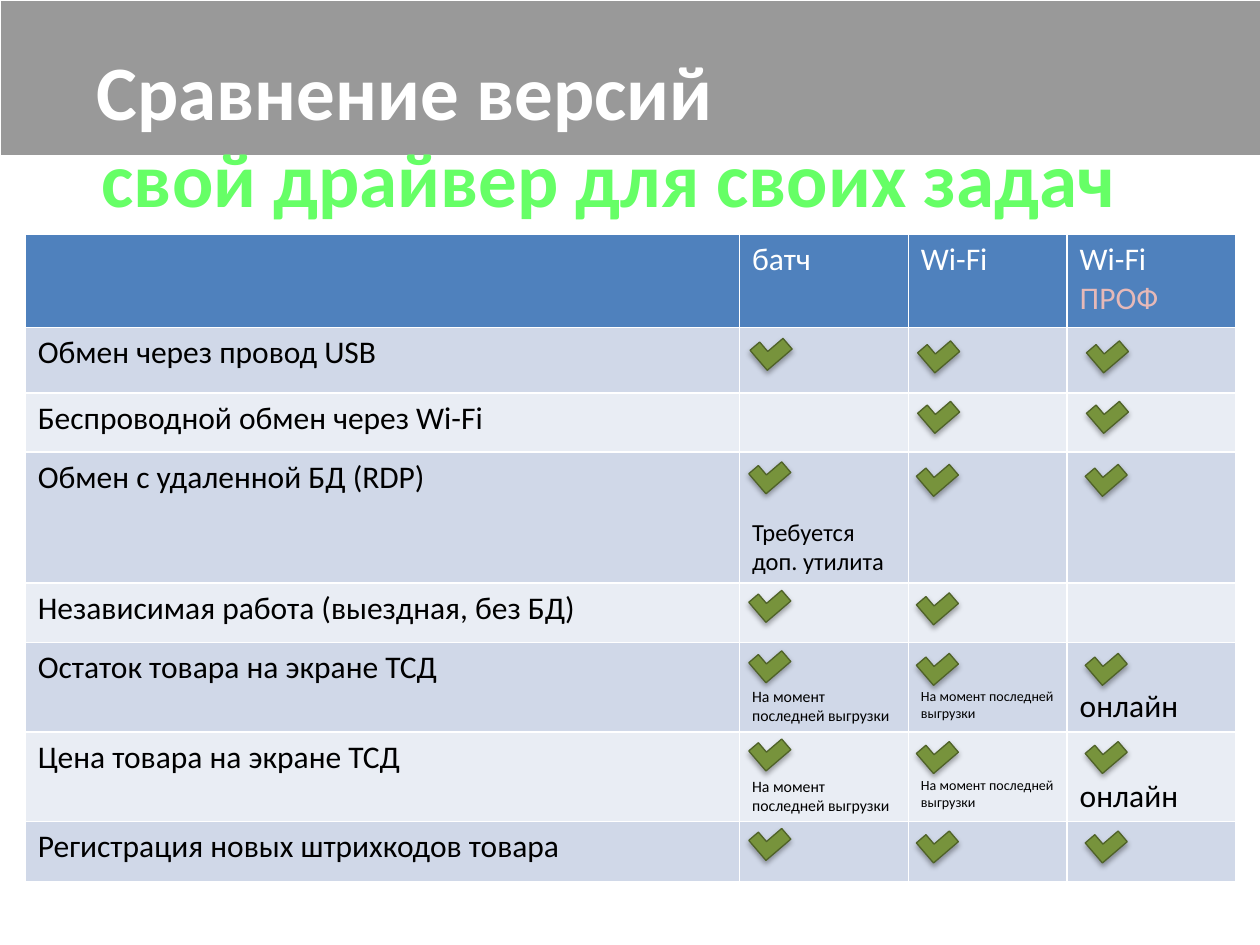
from lxml.etree import SubElement
from pptx import Presentation
from pptx.dml.color import RGBColor
from pptx.enum.shapes import MSO_SHAPE as Shape
from pptx.enum.text import MSO_AUTO_SIZE as AutoSize
from pptx.oxml.ns import qn
from pptx.util import Inches, Pt

FONT = "Calibri"
TITLES = [
    ("Сравнение версий", "FFFFFF", (0.67, 0.3, 5.14, 0.84)),
    ("свой драйвер для своих задач", "66FF66", (0.71, 0.99, 8.33, 0.84)),
]
HEADER_HEIGHT = 0.74
HEADERS = [
    [],
    [("батч", "FFFFFF")],
    [("Wi-Fi", "FFFFFF")],
    [("Wi-Fi ", "FFFFFF"), ("ПРОФ", "E6B9B8")],
]
COLUMN_WIDTHS = [5.67, 1.34, 1.26, 1.34]
TABLE_LEFT, TABLE_TOP = 0.2, 1.86
BANDS = ["D0D8E8", "E9EDF4"]

# A note is its text, its size and its distance from the top of the cell
UTILITY_NOTE = ("Требуется доп. утилита", 14, 0.52)
STOCK_NOTES = [
    ("На момент последней выгрузки", 9, 0.36),
    ("На момент последней выгрузки", 8, 0.36),
    ("онлайн", 18, 0.36),
]
# Feature, row height, top of its ticks, ticked versions, notes by version
FEATURES = [
    ("Обмен через провод USB", 0.52, 2.69, (0, 1, 2), []),
    ("Беспроводной обмен через Wi-Fi", 0.47, 3.17, (1, 2), []),
    ("Обмен с удаленной БД (RDP)", 1.04, 3.67, (0, 1, 2), [UTILITY_NOTE]),
    ("Независимая работа (выездная, без БД)", 0.47, 4.69, (0, 1), []),
    ("Остаток товара на экране ТСД", 0.7, 5.17, (0, 1, 2), STOCK_NOTES),
    ("Цена товара на экране ТСД", 0.7, 5.87, (0, 1, 2), STOCK_NOTES),
    ("Регистрация новых штрихкодов товара", 0.48, 6.58, (0, 1, 2), []),
]
TICK_LEFTS = [5.98, 7.31, 8.65]
TICK_RAISES = [0.02, 0, 0]
TICK_SIZE = (0.26, 0.21)


def color(value):
    return RGBColor.from_string(value)


def paint(target, value):
    target.fill.solid()
    target.fill.fore_color.rgb = color(value)


def add_span(para, text, size, value, bold=False):
    span = para.add_run()
    span.text = text
    formats = {"name": FONT, "size": Pt(size), "bold": bold}
    for name, setting in formats.items():
        setattr(span.font, name, setting)
    span.font.color.rgb = color(value)


def add_banner(page):
    banner = page.shapes.add_shape(
        Shape.RECTANGLE, *map(Inches, (0.01, 0.01, 9.99, 1.22)))
    banner.shadow.inherit = False
    paint(banner, "000000")
    banner.line.fill.background()
    fill_color = banner._element.spPr.find(qn("a:solidFill"))[0]
    SubElement(fill_color, qn("a:alpha"), val="40000")


def add_title(page, text, value, place):
    box = page.shapes.add_textbox(*map(Inches, place))
    box.text_frame.word_wrap = False
    box.text_frame.auto_size = AutoSize.SHAPE_TO_FIT_TEXT
    add_span(box.text_frame.paragraphs[0], text, 44, value, True)


def add_comparison(page):
    heights = [HEADER_HEIGHT] + [feature[1] for feature in FEATURES]
    area = (TABLE_LEFT, TABLE_TOP, sum(COLUMN_WIDTHS), sum(heights))
    table = page.shapes.add_table(
        len(heights), len(COLUMN_WIDTHS), *map(Inches, area)).table
    for column, width in zip(table.columns, COLUMN_WIDTHS):
        column.width = Inches(width)
    for row, height in zip(table.rows, heights):
        row.height = Inches(height)

    for cell, spans in zip(table.rows[0].cells, HEADERS):
        paint(cell, "4F81BD")
        for text, value in spans:
            add_span(cell.text_frame.paragraphs[0], text, 18, value)

    for index, (name, _, _, _, notes) in enumerate(FEATURES):
        cells = list(table.rows[index + 1].cells)
        for cell in cells:
            paint(cell, BANDS[index % 2])
        add_span(cells[0].text_frame.paragraphs[0], name, 18, "000000")
        for cell, (text, size, top) in zip(cells[1:], notes):
            cell.margin_top = Inches(top)
            add_span(cell.text_frame.paragraphs[0], text, size, "000000")


def add_tick(page, left, top):
    tick = page.shapes.add_shape(
        Shape.CORNER, *map(Inches, (left, top, *TICK_SIZE)))
    tick.rotation = 319.4
    tick.adjustments[0] = 0.53
    tick.adjustments[1] = 0.48
    paint(tick, "77933C")
    tick.line.color.rgb = color("4F6228")
    tick.line.width = Pt(0.75)
    tick.shadow.inherit = False
    effects = tick._element.spPr.find(qn("a:effectLst"))
    shadow = SubElement(
        effects, qn("a:outerShdw"), blurRad=str(Pt(3.1)), dist=str(Pt(1.8)),
        dir="5400000", rotWithShape="0")
    shadow_color = SubElement(shadow, qn("a:srgbClr"), val="000000")
    SubElement(shadow_color, qn("a:alpha"), val="35000")


def main():
    deck = Presentation()
    deck.slide_width, deck.slide_height = Inches(10), Inches(7.5)
    page = deck.slides.add_slide(deck.slide_layouts[6])
    add_banner(page)
    for title in TITLES:
        add_title(page, *title)
    add_comparison(page)
    for index, (_, _, top, versions, _) in enumerate(FEATURES):
        shift = 0.01 if index < 2 else 0
        for version in versions:
            add_tick(page, TICK_LEFTS[version] + shift,
                     top - TICK_RAISES[version])
    deck.save("out.pptx")


if __name__ == "__main__":
    main()
